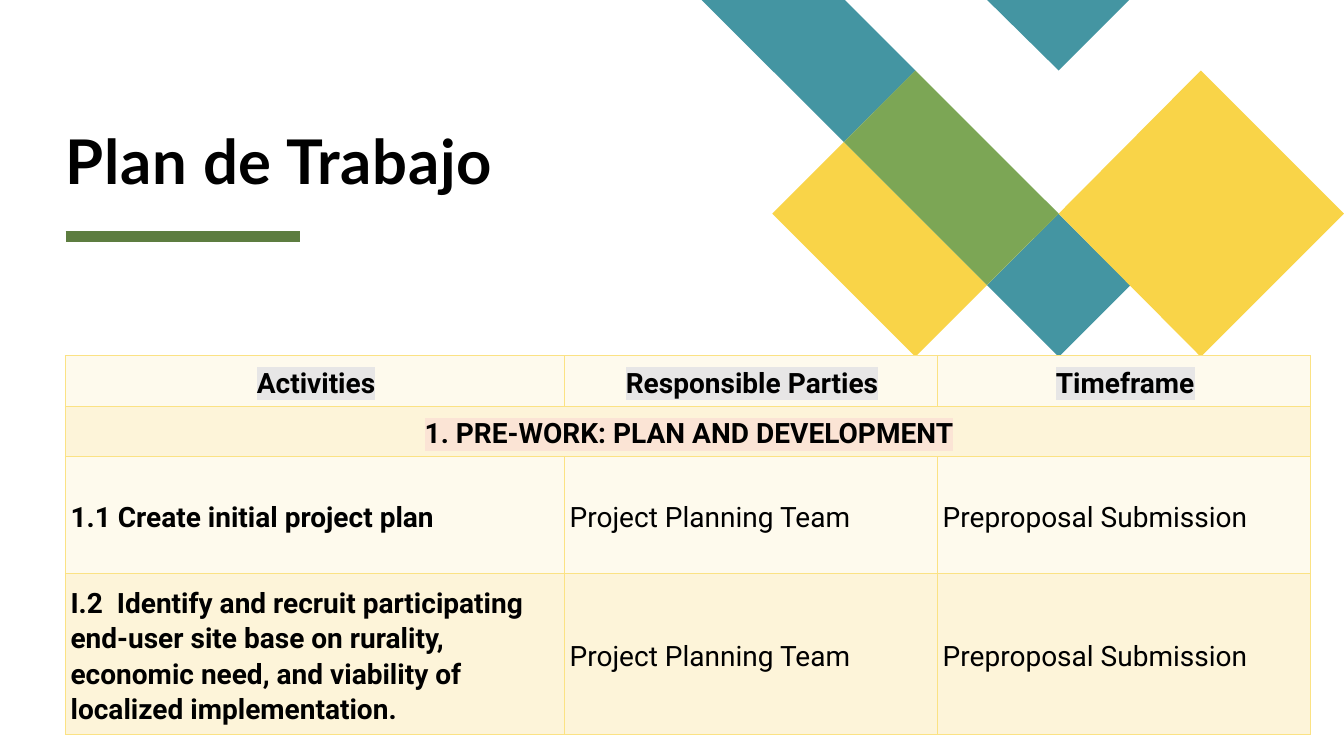
from dataclasses import dataclass

from lxml.etree import SubElement
from pptx import Presentation
from pptx.dml.color import RGBColor
from pptx.enum.shapes import MSO_CONNECTOR as Connector
from pptx.enum.text import MSO_ANCHOR as Anchor, MSO_AUTO_SIZE as AutoSize, PP_ALIGN as Align
from pptx.oxml.ns import qn
from pptx.slide import Slide
from pptx.table import _Cell as Cell
from pptx.util import Inches, Pt

BLACK = RGBColor(0x00, 0x00, 0x00)
TEAL = RGBColor(0x44, 0x95, 0xA2)
YELLOW = RGBColor(0xF9, 0xD4, 0x48)
GREEN = RGBColor(0x7C, 0xA6, 0x55)
DARK_GREEN = RGBColor(0x5D, 0x7D, 0x40)
CREAM = RGBColor(0xFE, 0xFA, 0xED)
SAND = RGBColor(0xFD, 0xF4, 0xD9)
BORDER = RGBColor(0xFB, 0xE2, 0x84)
GRAY_MARK = RGBColor(0xE7, 0xE6, 0xE6)
PINK_MARK = RGBColor(0xFB, 0xE4, 0xD5)


@dataclass
class Tile:
    color: RGBColor
    points: list[tuple[float, float]]


@dataclass
class Row:
    height: float
    fill: RGBColor
    texts: list[str]
    mark: RGBColor | None = None


TILES = [
    Tile(TEAL, [(6.96, 0), (8.38, 0), (9.08, 0.7), (8.37, 1.41)]),
    Tile(TEAL, [(10.5, 2.12), (11.21, 2.83), (10.5, 3.54), (9.79, 2.83)]),
    Tile(YELLOW, [(8.37, 1.41), (9.79, 2.83), (9.08, 3.54), (7.66, 2.12)]),
    Tile(TEAL, [(9.79, 0), (11.2, 0), (10.5, 0.7)]),
    Tile(GREEN, [(9.08, 0.7), (10.5, 2.12), (9.79, 2.83), (8.37, 1.41)]),
    Tile(YELLOW, [(11.91, 0.7), (13.33, 2.12), (11.91, 3.54), (10.5, 2.12)]),
]
COLUMN_WIDTHS = [4.95, 3.7, 3.7]
TEAM = "Project Planning Team"
TIMEFRAME = "Preproposal Submission"
ROWS = [
    Row(0.5, CREAM, ["Activities", "Responsible Parties", "Timeframe"], GRAY_MARK),
    Row(0.5, SAND, ["1. PRE-WORK: PLAN AND DEVELOPMENT"], PINK_MARK),
    Row(1.16, CREAM, ["1.1 Create initial project plan", TEAM, TIMEFRAME]),
    Row(1.6, SAND, [
        "I.2  Identify and recruit participating end-user site base on rurality, "
        "economic need, and viability of localized implementation.", TEAM, TIMEFRAME]),
]


def draw_tile(page: Slide, tile: Tile) -> None:
    corners = [(Inches(x), Inches(y)) for x, y in tile.points]
    builder = page.shapes.build_freeform(*corners[0])
    builder.add_line_segments(corners[1:], close=True)
    shape = builder.convert_to_shape()
    shape.shadow.inherit = False
    shape.fill.solid()
    shape.fill.fore_color.rgb = tile.color
    shape.line.fill.background()


def draw_title(page: Slide) -> None:
    title = page.shapes.title
    title.left, title.top = Inches(0.65), Inches(0.21)
    title.width, title.height = Inches(7.42), Inches(1.74)
    frame = title.text_frame
    frame.auto_size = AutoSize.NONE
    frame.vertical_anchor = Anchor.BOTTOM
    frame.margin_left = frame.margin_right = frame.margin_top = frame.margin_bottom = 0
    para = frame.paragraphs[0]
    para.alignment = Align.LEFT
    para.line_spacing = 0.8
    span = para.add_run()
    span.text = "Plan de Trabajo"
    span.font.name, span.font.size, span.font.bold = "Lato", Pt(44), True
    span.font.color.rgb = BLACK
    span.font._element.set("spc", "50")


def draw_rule(page: Slide) -> None:
    rule = page.shapes.add_connector(
        Connector.STRAIGHT, Inches(0.65), Inches(2.35), Inches(2.98), Inches(2.35))
    rule.line.color.rgb = DARK_GREEN
    rule.line.width = Pt(8)
    SubElement(rule._element.spPr, qn("a:effectLst"))


def add_solid_fill(parent, color: RGBColor) -> None:
    SubElement(SubElement(parent, qn("a:solidFill")), qn("a:srgbClr"), val=str(color))


def style_cell(cell: Cell, fill: RGBColor) -> None:
    cell.vertical_anchor = Anchor.MIDDLE
    cell.margin_left = Inches(0.05)
    cell.margin_top = cell.margin_right = Inches(0.03)
    cell.margin_bottom = 0
    properties = cell._tc.get_or_add_tcPr()
    for side in ("a:lnL", "a:lnR", "a:lnT", "a:lnB"):
        add_solid_fill(SubElement(properties, qn(side), w=str(Pt(1))), BORDER)
    cell.fill.solid()
    cell.fill.fore_color.rgb = fill


def write_cell(cell: Cell, text: str, bold: bool, mark: RGBColor | None) -> None:
    para = cell.text_frame.paragraphs[0]
    para.alignment = Align.CENTER if mark else Align.LEFT
    para.line_spacing = 1.07
    span = para.add_run()
    span.text = text
    span.font.size, span.font.bold = Pt(20), bold
    span.font.color.rgb = BLACK
    if mark:
        highlight = SubElement(span.font._element, qn("a:highlight"))
        SubElement(highlight, qn("a:srgbClr"), val=str(mark))
    span.font.name = "Roboto"


def draw_plan(page: Slide) -> None:
    box = page.shapes.add_table(
        len(ROWS), len(COLUMN_WIDTHS), Inches(0.65), Inches(3.53),
        Inches(sum(COLUMN_WIDTHS)), Inches(sum(row.height for row in ROWS)))
    table = box.table
    table.first_row = table.horz_banding = False
    for column, width in zip(table.columns, COLUMN_WIDTHS):
        column.width = Inches(width)
    for index, row in enumerate(ROWS):
        table.rows[index].height = Inches(row.height)
        for cell in table.rows[index].cells:
            style_cell(cell, row.fill)
        if len(row.texts) == 1:
            table.cell(index, 0).merge(table.cell(index, len(COLUMN_WIDTHS) - 1))
        for position, text in enumerate(row.texts):
            bold = position == 0 or row.mark is not None
            write_cell(table.cell(index, position), text, bold, row.mark)


def main() -> None:
    deck = Presentation()
    deck.slide_width, deck.slide_height = Inches(13.33), Inches(7.5)
    page = deck.slides.add_slide(deck.slide_layouts.get_by_name("Title Only"))
    for tile in TILES:
        draw_tile(page, tile)
    draw_rule(page)
    draw_title(page)
    draw_plan(page)
    deck.save("out.pptx")


if __name__ == "__main__":
    main()
